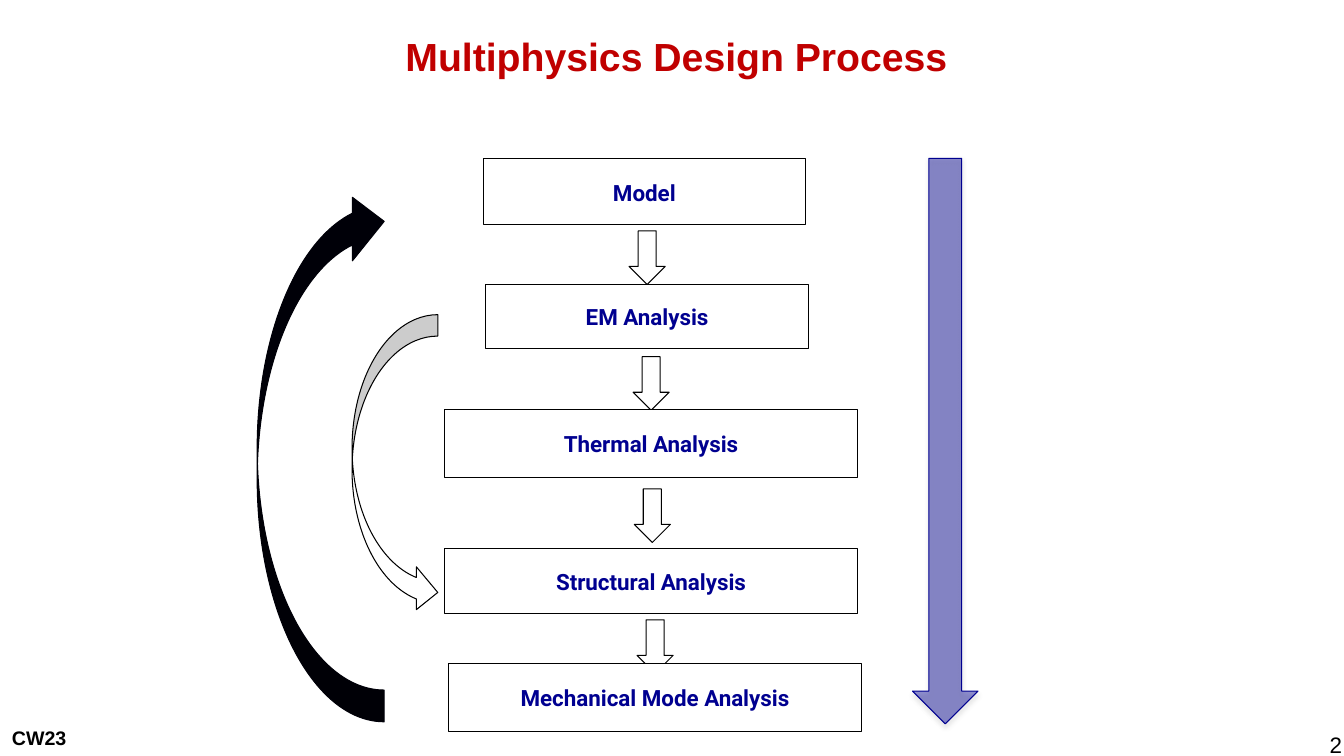
from lxml import etree
from pptx import Presentation
from pptx import util as u
from pptx.dml.color import RGBColor
from pptx.enum import shapes, text
from pptx.oxml.ns import qn

STEPS = [
    ("Model", 0.97, 0, 8.13, 1.68, 4.65, 1.83),
    ("EM Analysis", 1.04, 3.17, 8.13, 1.63, 4.75, 5),
    ("Thermal Analysis", 0, 6.32, 10.41, 1.73, 4.78, 8.33),
    ("Structural Analysis", 0, 9.83, 10.41, 1.65, 4.85, 11.63),
    ("Mechanical Mode Analysis", 0.1, 12.72, 10.41, 1.73, None, None),
]


def tint(code):
    """Turn a hex string into a colour."""
    return RGBColor.from_string(code)


def style(run, size, code, bold=True, face="Arial"):
    """Set the font of a run."""
    font = run.font
    font.size, font.bold, font.name = u.Pt(size), bold, face
    font.color.rgb = tint(code)


def block(slide, kind, x, y, w, h, fill="FFFFFF", line="000000"):
    """Draw a filled shape with a thin outline."""
    shape = slide.shapes.add_shape(kind, u.Cm(x), u.Cm(y), u.Cm(w), u.Cm(h))
    shape.shadow.inherit = False
    shape.fill.solid()
    shape.fill.fore_color.rgb = tint(fill)
    shape.line.color.rgb = tint(line)
    shape.line.width = u.Pt(0.75)
    return shape


def label(slide, x, y, w, h, words, size, code, align, bold=True):
    """Place one line of text in a box."""
    frame = slide.shapes.add_textbox(u.Cm(x), u.Cm(y), u.Cm(w), u.Cm(h)).text_frame
    frame.word_wrap = True
    frame.text = words
    frame.paragraphs[0].alignment = align
    style(frame.paragraphs[0].runs[0], size, code, bold)
    return frame


def flow(slide, x, y):
    """Draw the analysis steps and the arrows between them."""
    for name, dx, dy, w, h, ax, ay in STEPS:
        box = block(slide, shapes.MSO_SHAPE.FLOWCHART_PROCESS, x + dx, y + dy, w, h)
        frame = box.text_frame
        frame.text = name
        frame.word_wrap = False
        frame.vertical_anchor = text.MSO_ANCHOR.MIDDLE
        para = frame.paragraphs[0]
        para.alignment = text.PP_ALIGN.CENTER
        para.line_spacing = 1.04
        style(para.runs[0], 16, "000090", face="Roboto")
        if ax is not None:
            block(slide, shapes.MSO_SHAPE.DOWN_ARROW, x + ax, y + ay, 0.91, 1.35)


def loops(slide, x, y):
    """Draw the outer return arrow and the inner forward arrow."""
    kind = shapes.MSO_SHAPE.CURVED_RIGHT_ARROW
    outer = block(slide, kind, x, y, 3.2, 13.41, "000008", "000008")
    outer._element.spPr.find(qn("a:xfrm")).set("flipV", "1")
    block(slide, kind, x + 2.39, y + 3.15, 2.16, 7.54)


def trend(slide, x, y, w, h):
    """Draw the long translucent arrow with its soft shadow."""
    arrow = block(slide, shapes.MSO_SHAPE.DOWN_ARROW, x, y, w, h, "000090", "000090")
    props = arrow._element.spPr
    shade = props.find(qn("a:solidFill")).find(qn("a:srgbClr"))
    etree.SubElement(shade, qn("a:alpha"), val="44000")
    cast = etree.SubElement(props.find(qn("a:effectLst")), qn("a:outerShdw"),
                            blurRad=str(u.Pt(3.1)), dist=str(u.Pt(1.8)),
                            dir="5400000", rotWithShape="0")
    gray = etree.SubElement(cast, qn("a:srgbClr"), val="808080")
    etree.SubElement(gray, qn("a:alpha"), val="35000")


def main():
    """Build and save the slide."""
    deck = Presentation()
    deck.slide_width, deck.slide_height = u.Cm(33.86), u.Cm(19.05)
    slide = deck.slides.add_slide(deck.slide_layouts[6])
    align = text.PP_ALIGN
    label(slide, 0.05, 18.16, 4.6, 0.86, "CW23", 14, "000000", align.LEFT)
    title = label(slide, 4.34, 0.36, 25.4, 2.08, "Multiphysics Design Process",
                  28, "C00000", align.CENTER)
    title.vertical_anchor = text.MSO_ANCHOR.MIDDLE
    flow(slide, 11.2, 3.99)
    trend(slide, 22.99, 3.99, 1.65, 14.25)
    loops(slide, 6.48, 4.78)
    label(slide, 31.67, 18.31, 2.39, 0.74, "2", 16, "000000", align.RIGHT, False)
    deck.save("out.pptx")


if __name__ == "__main__":
    main()
